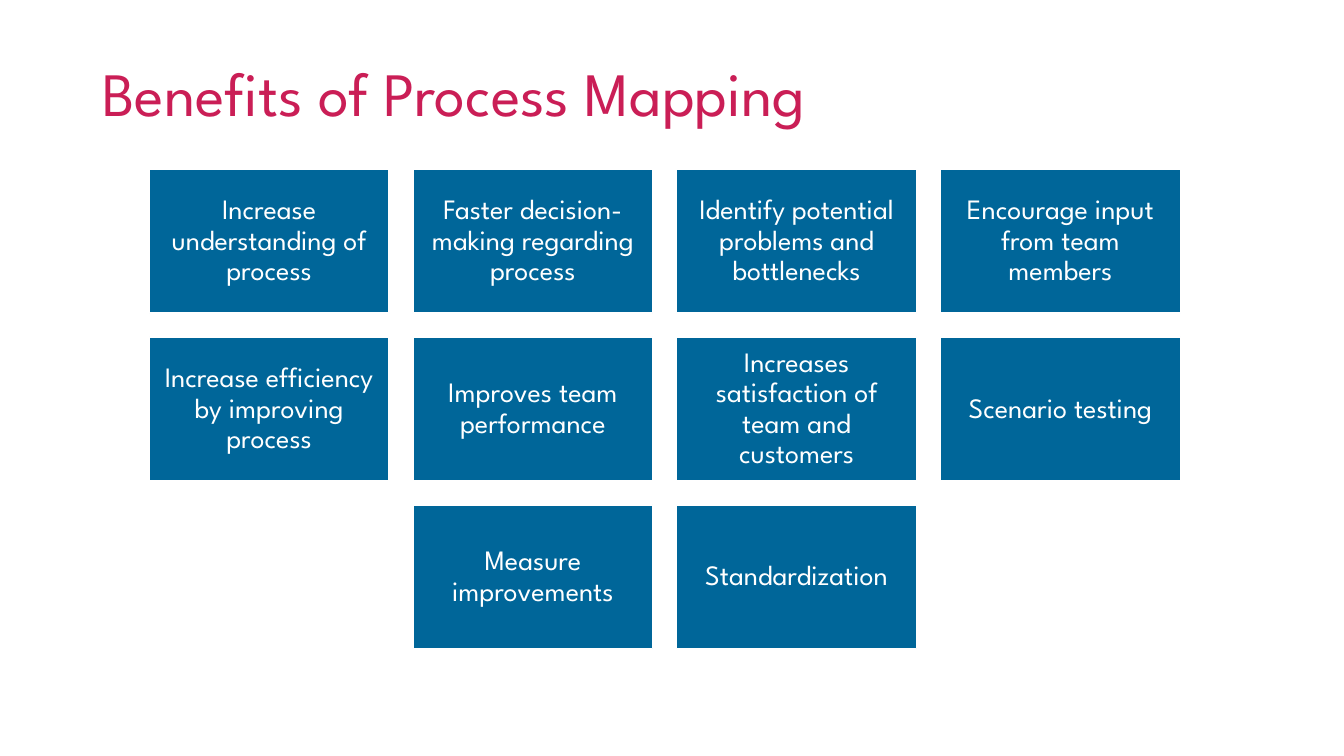
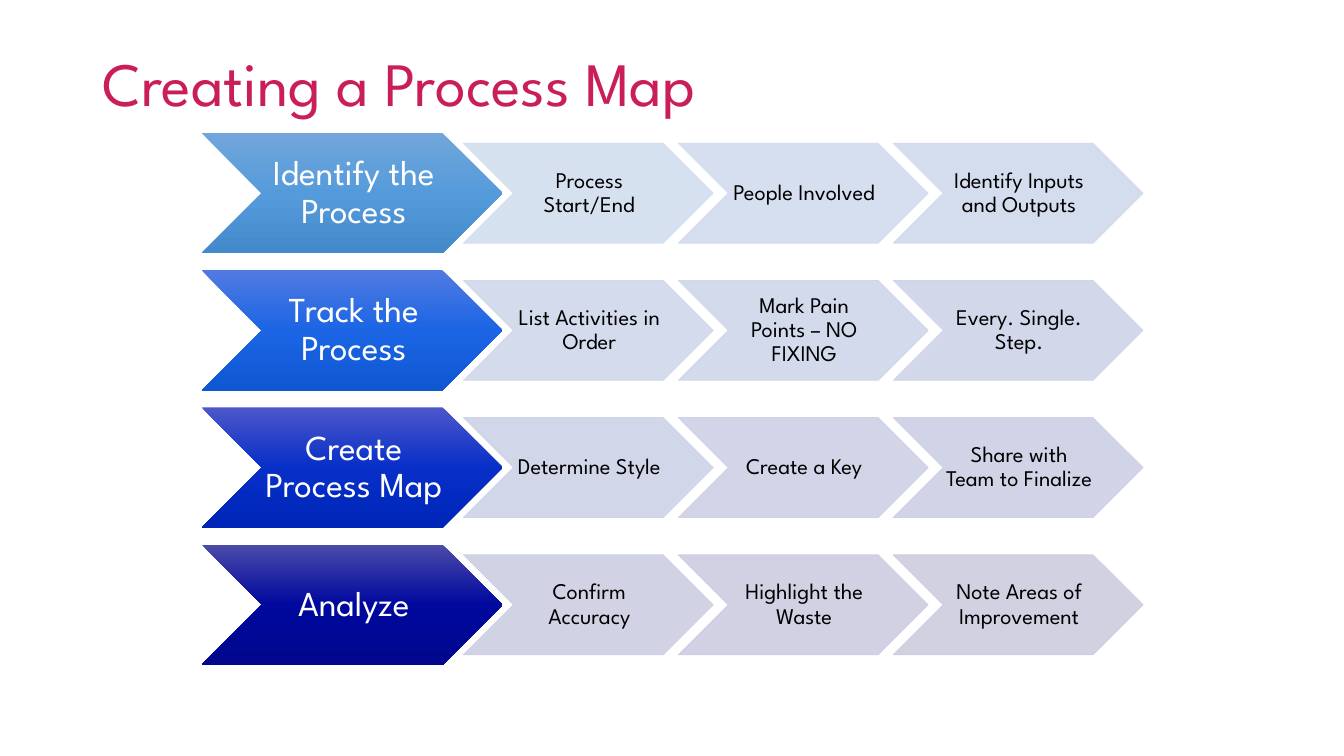
from copy import deepcopy

from lxml import etree
from pptx import Presentation
from pptx.dml.color import RGBColor
from pptx.enum.shapes import MSO_SHAPE
from pptx.enum.text import MSO_ANCHOR, PP_ALIGN
from pptx.oxml.ns import qn
from pptx.util import Pt

RECT, CHEVRON = MSO_SHAPE.RECTANGLE, MSO_SHAPE.CHEVRON
MIDDLE = MSO_ANCHOR.MIDDLE
LEFT, CENTER = PP_ALIGN.LEFT, PP_ALIGN.CENTER

HUES = {"title": "CA1E56", "box": "006699", "white": "FFFFFF", "black": "000000"}
FACE = "League Spartan"


def write(shape, text, size, hue, align=CENTER, pads=(7.2, 3.6, 7.2, 3.6)):
    """Put one middle-anchored paragraph in a shape; pads run left, top, right, bottom."""
    frame = shape.text_frame
    sides = ("left", "top", "right", "bottom")
    form = {"margin_" + side: Pt(pad) for side, pad in zip(sides, pads)}
    form.update(word_wrap=True, vertical_anchor=MIDDLE, text=text)
    for name, value in form.items():
        setattr(frame, name, value)
    para = frame.paragraphs[0]
    para.alignment, para.line_spacing = align, 0.9
    font = para.runs[0].font
    for name, value in {"name": FACE, "size": Pt(size)}.items():
        setattr(font, name, value)
    font.color.rgb = RGBColor.from_string(hue)


def draw(slide, kind, x, y, w, h, fills, edge=None):
    """Add a shape with a solid fill, or a downward gradient when given several hues."""
    shape = slide.shapes.add_shape(kind, Pt(x), Pt(y), Pt(w), Pt(h))
    shape.shadow.inherit = False
    if len(fills) == 1:
        shape.fill.solid()
        shape.fill.fore_color.rgb = RGBColor.from_string(fills[0])
    else:
        shape.fill.gradient()
        shape.fill.gradient_angle = 270
        stops = shape.element.spPr.find(".//" + qn("a:gsLst"))
        while len(stops) < len(fills):
            stops.append(deepcopy(stops[0]))
        for i, stop in enumerate(shape.fill.gradient_stops):
            stop.position = i / (len(fills) - 1)
            stop.color.rgb = RGBColor.from_string(fills[i])
    if edge:
        hue, width = edge
        shape.line.color.rgb = RGBColor.from_string(hue)
        shape.line.width = Pt(width)
    else:
        shape.line.fill.background()
    return shape


deck = Presentation()
deck.slide_width, deck.slide_height = Pt(960), Pt(540)

slides = []
for title, top, high in (
    ("Benefits of Process Mapping", 16.6, 104.4),
    ("Creating a Process Map", 28.8, 66.2),
):
    slide = deck.slides.add_slide(deck.slide_layouts[6])
    box = slide.shapes.add_textbox(Pt(66), Pt(top), Pt(828), Pt(high))
    write(box, title, 44, HUES["title"], LEFT)
    slides.append(slide)
gains, steps = slides

# Benefits: rows of boxes, each row centred on the grid
GRID = [
    [
        "Increase understanding of process",
        "Faster decision-making regarding process",
        "Identify potential problems and bottlenecks",
        "Encourage input from team members",
    ],
    [
        "Increase efficiency by improving process",
        "Improves team performance",
        "Increases satisfaction of team and customers",
        "Scenario testing",
    ],
    ["Measure improvements", "Standardization"],
]
WIDE, HIGH, GAP = 171.3, 102.8, 17.1
for row, texts in enumerate(GRID):
    inset = (len(GRID[0]) - len(texts)) / 2
    for col, text in enumerate(texts):
        x = 106.6 + (col + inset) * (WIDE + GAP)
        y = 120.8 + row * (HIGH + GAP)
        box = draw(gains, RECT, x, y, WIDE, HIGH, [HUES["box"]], (HUES["white"], 1))
        write(box, text, 20, HUES["white"], pads=(5.8,) * 4)

# Process map: a lead chevron and its three details in each row
ROWS = [
    ("Identify the Process", ["71A6DB", "559BDB", "448ACA"], [
        ("Process Start/End", "D2DEEF"),
        ("People Involved", "D1DCEE"),
        ("Identify Inputs and Outputs", "D0DAED"),
    ]),
    ("Track the Process", ["517AE1", "1B65E4", "0F57D3"], [
        ("List Activities in Order", "CFD8EB"),
        ("Mark Pain Points – NO FIXING", "CFD6EA"),
        ("Every. Single. Step.", "CED4E8"),
    ]),
    ("Create Process Map", ["4C57C9", "072FC8", "0026B8"], [
        ("Determine Style", "CED2E7"),
        ("Create a Key", "CDD1E5"),
        ("Share with Team to Finalize", "CDCFE4"),
    ]),
    ("Analyze", ["4B4BA9", "00089E", "00078C"], [
        ("Confirm Accuracy", "CCCEE2"),
        ("Highlight the Waste", "CCCDE0"),
        ("Note Areas of Improvement", "CCCCDE"),
    ]),
]
LEAD, PART = 86, 71.4
RATIO = 2.5
for row, (lead, blend, parts) in enumerate(ROWS):
    y = 95 + row * 98
    arrow = draw(steps, CHEVRON, 144, y, LEAD * RATIO, LEAD, blend)
    write(arrow, lead, 25, HUES["white"], pads=(2.3, 1.2, 0, 1.2))
    for col, (text, hue) in enumerate(parts):
        arrow = draw(steps, CHEVRON, 331 + col * 153.5, y + (LEAD - PART) / 2,
                     PART * RATIO, PART, [hue], (hue, 0.5))
        for tint in arrow.element.spPr.iter(qn("a:srgbClr")):
            etree.SubElement(tint, qn("a:alpha"), val="90000")
        write(arrow, text, 16, HUES["black"], pads=(1.4, 0.7, 0, 0.7))

deck.save("out.pptx")
